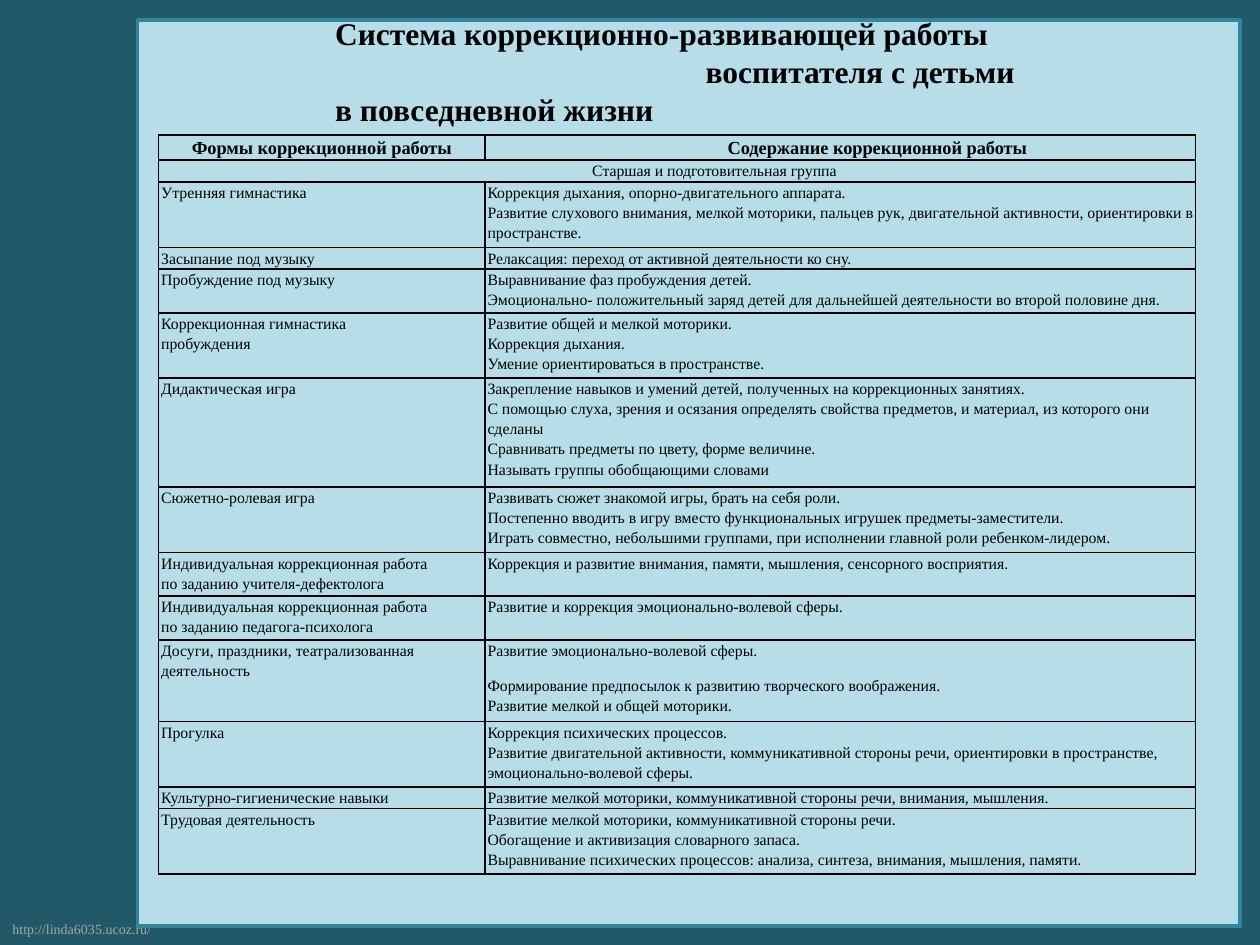
from lxml.etree import SubElement
from pptx import Presentation
from pptx.dml.color import RGBColor
from pptx.enum.shapes import MSO_SHAPE
from pptx.enum.text import MSO_ANCHOR, MSO_AUTO_SIZE, PP_ALIGN
from pptx.oxml.ns import qn
from pptx.util import Inches, Pt

COLORS = {"back": "215968", "panel": "B7DEE8", "frame": "31859C",
          "ink": "000000", "muted": "A6A6A6"}
GRID_COLUMNS, GRID_ROWS = 100, 75
LINE_ROWS = 1.73
HEADER_INDENT = 5.9

TITLE = [("Система коррекционно-развивающей работы", 0),
         ("воспитателя с детьми", 29.4),
         ("в повседневной жизни", 0)]
HEADINGS = ("Формы коррекционной работы", "Содержание коррекционной работы")
GROUP = "Старшая и подготовительная группа"
ACTIVITIES = [
    ("Утренняя гимнастика", 3, [
        "Коррекция дыхания, опорно-двигательного аппарата.",
        "Развитие слухового внимания, мелкой моторики, пальцев рук, двигательной активности, "
        "ориентировки в пространстве."]),
    ("Засыпание под музыку", 1, ["Релаксация: переход от активной деятельности ко сну."]),
    ("Пробуждение под музыку", 2, [
        "Выравнивание фаз пробуждения детей.",
        "Эмоционально- положительный заряд детей для дальнейшей деятельности "
        "во второй половине дня."]),
    ("Коррекционная гимнастика\vпробуждения", 3, [
        "Развитие общей и мелкой моторики.",
        "Коррекция дыхания.",
        "Умение ориентироваться в пространстве."]),
    ("Дидактическая игра", 5, [
        "Закрепление навыков и умений детей, полученных на коррекционных занятиях.",
        "С помощью слуха, зрения и осязания определять свойства предметов, и материал, "
        "из которого они сделаны",
        "Сравнивать предметы по цвету, форме величине.",
        "Называть группы обобщающими словами"]),
    ("Сюжетно-ролевая игра", 3, [
        "Развивать сюжет знакомой игры, брать на себя роли.",
        "Постепенно вводить в игру вместо функциональных игрушек предметы-заместители.",
        "Играть совместно, небольшими группами, при исполнении главной роли "
        "ребенком-лидером."]),
    ("Индивидуальная коррекционная работа\vпо заданию учителя-дефектолога", 2, [
        "Коррекция и развитие внимания, памяти, мышления, сенсорного восприятия."]),
    ("Индивидуальная коррекционная работа\vпо заданию педагога-психолога", 2, [
        "Развитие и коррекция эмоционально-волевой сферы."]),
    ("Досуги, праздники, театрализованная деятельность", 3.75, [
        "Развитие эмоционально-волевой сферы.",
        "Формирование предпосылок к развитию творческого воображения.",
        "Развитие мелкой и общей моторики."]),
    ("Прогулка", 3, [
        "Коррекция психических процессов.",
        "Развитие двигательной активности, коммуникативной стороны речи, ориентировки "
        "в пространстве, эмоционально-волевой сферы."]),
    ("Культурно-гигиенические навыки", 1, [
        "Развитие мелкой моторики, коммуникативной стороны речи, внимания, мышления."]),
    ("Трудовая деятельность", 3, [
        "Развитие мелкой моторики, коммуникативной стороны речи.",
        "Обогащение и активизация словарного запаса.",
        "Выравнивание психических процессов: анализа, синтеза, внимания, мышления, памяти."]),
]
DOUBLE_SPACED = "Формирование предпосылок"


class SlideBuilder:
    font_name = "Times New Roman"

    def __init__(self, deck):
        self.column = deck.slide_width / GRID_COLUMNS
        self.row = deck.slide_height / GRID_ROWS
        self.slide = deck.slides.add_slide(deck.slide_layouts[5])
        self.fill(self.slide.background.fill, "back")

    def fill(self, target, color):
        target.solid()
        target.fore_color.rgb = RGBColor.from_string(COLORS[color])

    def columns(self, count):
        return round(count * self.column)

    def rows(self, count):
        return round(count * self.row)

    def box(self, left, top, width, height):
        return (self.columns(left), self.rows(top),
                self.columns(width), self.rows(height))

    def style(self, paragraph, size, color="ink", bold=False):
        font = paragraph.font
        font.name, font.size, font.bold = self.font_name, Pt(size), bold
        font.color.rgb = RGBColor.from_string(COLORS[color])

    def caption(self, text, *place):
        frame = self.slide.shapes.add_textbox(*self.box(*place)).text_frame
        frame.word_wrap = False
        frame.text = text
        self.style(frame.paragraphs[0], 8, "muted")

    def panel(self, *place):
        panel = self.slide.shapes.add_shape(MSO_SHAPE.RECTANGLE, *self.box(*place))
        panel.shadow.inherit = False
        self.fill(panel.fill, "panel")
        self.fill(panel.line.fill, "frame")
        panel.line.width = Pt(2)

    def title(self, lines, *place):
        title = self.slide.shapes.title
        title.left, title.top, title.width, title.height = self.box(*place)
        self.slide.shapes._spTree.append(title._element)
        frame = title.text_frame
        frame.word_wrap = True
        frame.auto_size = MSO_AUTO_SIZE.NONE
        frame.vertical_anchor = MSO_ANCHOR.MIDDLE
        frame.text = "\n".join(text for text, _ in lines)
        for paragraph, (_, indent) in zip(frame.paragraphs, lines):
            paragraph.alignment = PP_ALIGN.LEFT
            paragraph._p.get_or_add_pPr().set("marL", str(self.columns(indent)))
            self.style(paragraph, 18, bold=True)

    def table(self, left, top, widths, heights):
        table = self.slide.shapes.add_table(
            len(heights), len(widths),
            *self.box(left, top, sum(widths), sum(heights))).table
        table.first_row = table.horz_banding = False
        for column, width in zip(table.columns, widths):
            column.width = self.columns(width)
        for row, height in zip(table.rows, heights):
            row.height = self.rows(height)
        for cell in table.iter_cells():
            cell.margin_left = cell.margin_right = Inches(0.02)
            cell.margin_top = cell.margin_bottom = 0
            self.borders(cell)
            cell.fill.background()
        return table

    def borders(self, cell):
        properties = cell._tc.get_or_add_tcPr()
        for side in ("a:lnL", "a:lnR", "a:lnT", "a:lnB"):
            line = SubElement(properties, qn(side), w=str(Pt(1)))
            SubElement(SubElement(line, qn("a:solidFill")), qn("a:srgbClr"),
                       val=COLORS["ink"])

    def cell(self, cell, text, size=9, bold=False, centered=False, indent=0):
        cell.text = text
        for paragraph in cell.text_frame.paragraphs:
            paragraph.line_spacing = 2.0 if paragraph.text.startswith(DOUBLE_SPACED) else 1.15
            paragraph.alignment = PP_ALIGN.CENTER if centered else PP_ALIGN.LEFT
            paragraph._p.get_or_add_pPr().set("indent", str(self.columns(indent)))
            self.style(paragraph, size, bold=bold)


def main():
    deck = Presentation()
    deck.slide_width, deck.slide_height = Inches(10), Inches(7.5)
    builder = SlideBuilder(deck)
    builder.caption("http://linda6035.ucoz.ru/", 0, 72.6, 13.1, 2.4)
    builder.panel(10.9, 1.6, 87.5, 71.9)

    heights = [2, LINE_ROWS] + [lines * LINE_ROWS for _, lines, _ in ACTIVITIES]
    table = builder.table(12.6, 10.7, (25.9, 56.4), heights)
    for index, heading in enumerate(HEADINGS):
        builder.cell(table.cell(0, index), heading, 10.5, bold=True, centered=True,
                     indent=index * HEADER_INDENT)
    table.cell(1, 0).merge(table.cell(1, 1))
    builder.cell(table.cell(1, 0), GROUP, centered=True, indent=HEADER_INDENT)
    for index, (form, _, contents) in enumerate(ACTIVITIES, start=2):
        builder.cell(table.cell(index, 0), form)
        builder.cell(table.cell(index, 1), "\n".join(contents))

    builder.title(TITLE, 25.6, 2.1, 56.7, 7.1)
    deck.save("out.pptx")


if __name__ == "__main__":
    main()
